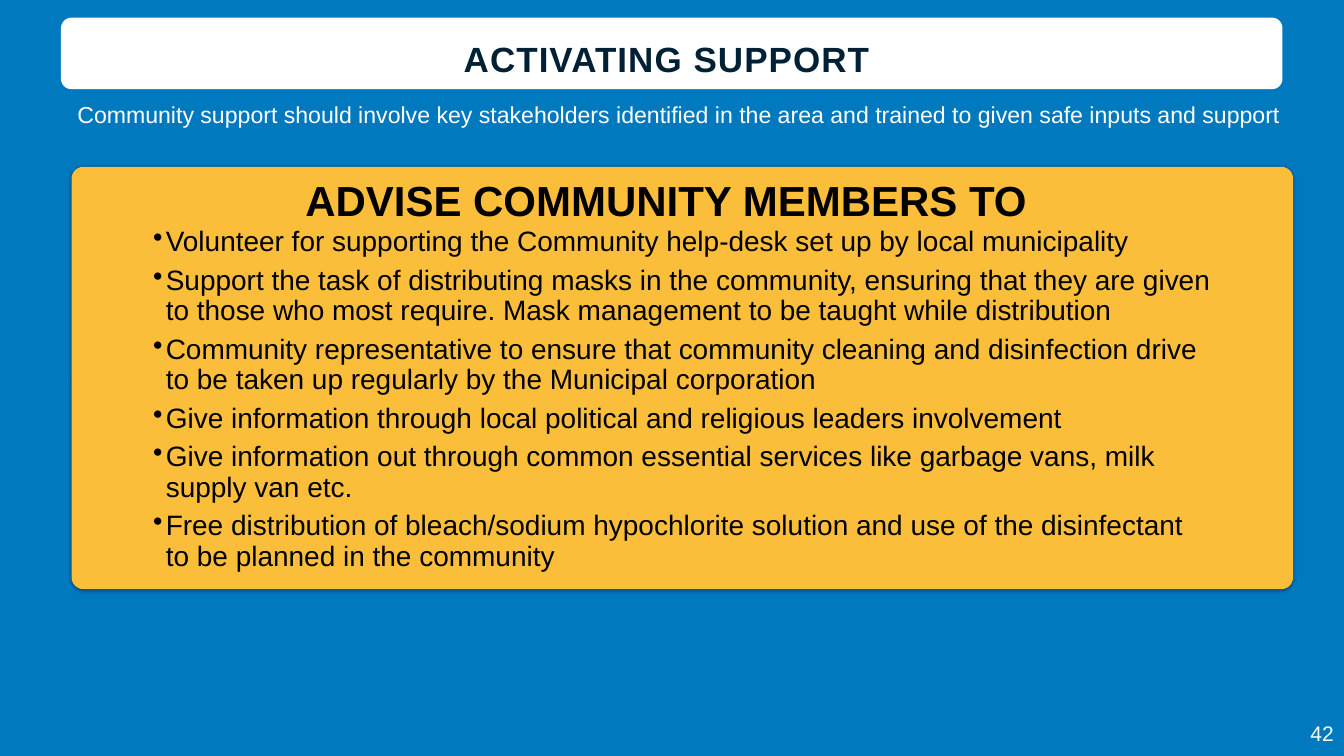
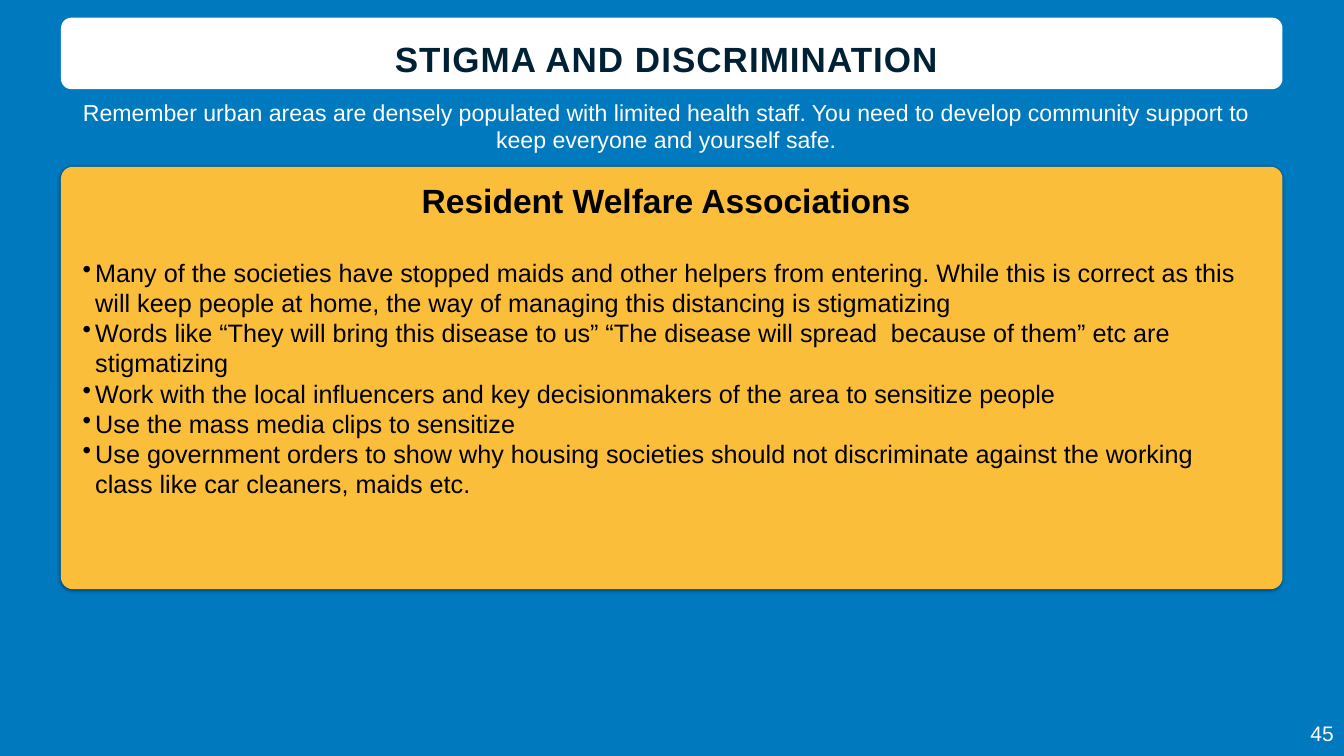
from dataclasses import dataclass

from lxml import etree
from pptx import Presentation
from pptx.dml.color import RGBColor
from pptx.enum.shapes import MSO_SHAPE
from pptx.enum.text import MSO_ANCHOR, MSO_AUTO_SIZE, PP_ALIGN
from pptx.oxml.ns import qn
from pptx.util import Inches, Pt

ROUNDED = MSO_SHAPE.ROUNDED_RECTANGLE
TOP, MIDDLE = MSO_ANCHOR.TOP, MSO_ANCHOR.MIDDLE
LEFT, CENTER = PP_ALIGN.LEFT, PP_ALIGN.CENTER
GROW = MSO_AUTO_SIZE.SHAPE_TO_FIT_TEXT
TITLE_ONLY = 5

BLUE, WHITE, NAVY, AMBER, BLACK = "0079BF", "FFFFFF", "002135", "FABE3B", "000000"
FONT = "Arial"
PANEL_WIDTH = 24.24


@dataclass(frozen=True)
class Box:
    left: float
    top: float
    width: float
    height: float

    def lengths(self) -> tuple:
        return tuple(Inches(v) for v in (self.left, self.top, self.width, self.height))


@dataclass(frozen=True)
class Style:
    size: float
    color: str
    bold: bool = False
    align: int = CENTER
    anchor: int = TOP
    inset: float = 0.05
    wrap: bool = True
    line_spacing: float | None = None
    space_before: float = 0
    tracking: float = 0
    bulleted: bool = False


@dataclass(frozen=True)
class TextBlock:
    box: Box
    style: Style
    lines: tuple[str, ...]


@dataclass(frozen=True)
class Topic:
    title: str
    number: str
    panel_left: float
    blocks: tuple[TextBlock, ...]


TITLE_BAND = Box(1.21, 0.35, PANEL_WIDTH, 1.42)
TITLE_BOX = Box(2.18, 0.62, 22.31, 0.88)
NUMBER_BOX = Box(25.94, 14.26, 0.59, 0.57)

TITLE = Style(50, NAVY, bold=True, line_spacing=1.1, tracking=1.5)
NUMBER = Style(30, WHITE, anchor=MIDDLE, inset=0.06, wrap=False)
INTRO = Style(33, WHITE, anchor=MIDDLE, inset=0.06, wrap=False)
LARGE_HEADING = Style(60, BLACK, bold=True, wrap=False)
HEADING = Style(48, BLACK, bold=True)
SPACED_BULLETS = Style(40, BLACK, align=LEFT, line_spacing=0.9, space_before=12,
                       bulleted=True)
BULLETS = Style(36, BLACK, align=LEFT, anchor=MIDDLE, inset=0.06, bulleted=True)

TOPICS = (
    Topic("ACTIVATING SUPPORT ", "42", 1.42, (
        TextBlock(Box(1.47, 1.96, 24.13, 0.62), INTRO, (
            "Community support should involve key stakeholders identified in the area "
            "and trained to given safe inputs and support ",
        )),
        TextBlock(Box(6, 3.41, 14.67, 1.03), LARGE_HEADING, (
            "ADVISE COMMUNITY MEMBERS TO ",
        )),
        TextBlock(Box(2.99, 4.47, 21.09, 6.62), SPACED_BULLETS, (
            "Volunteer for supporting the Community help-desk set up by local municipality",
            "Support the task of distributing masks in the community, ensuring that they are "
            "given to those who most require. Mask management to be taught while distribution",
            "Community representative to ensure that community cleaning and disinfection "
            "drive to be taken up regularly by the Municipal corporation",
            "Give information through local political and religious leaders involvement",
            "Give information out through common essential services like garbage vans, "
            "milk supply van etc.",
            "Free distribution of bleach/sodium hypochlorite solution and use of the "
            "disinfectant to be planned in the community",
        )),
    )),
    Topic("STIGMA AND DISCRIMINATION ", "45", 1.21, (
        TextBlock(Box(1.58, 1.92, 23.28, 1.15), INTRO, (
            "Remember urban areas are densely populated with limited health staff. "
            "You need to develop community support to",
            "keep everyone and yourself safe.",
        )),
        TextBlock(Box(2.42, 3.53, 21.6, 0.84), HEADING, (
            "Resident Welfare Associations",
        )),
        TextBlock(Box(1.58, 5.12, 23.28, 4.76), BULLETS, (
            "Many of the societies have stopped maids and other helpers from entering. While "
            "this is correct as this will keep people at home, the way of managing this "
            "distancing is stigmatizing",
            "Words like “They will bring this disease to us” “The disease will spread  "
            "because of them” etc are stigmatizing",
            "Work with the local influencers and key decisionmakers of the area to "
            "sensitize people",
            "Use the mass media clips to sensitize",
            "Use government orders to show why housing societies should not discriminate "
            "against the working class like car cleaners, maids etc.",
        )),
    )),
)


def paint(fill, color: str) -> None:
    fill.solid()
    fill.fore_color.rgb = RGBColor.from_string(color)


def add_bullet(paragraph) -> None:
    properties = paragraph._p.get_or_add_pPr()
    properties.set("marL", str(Inches(0.25)))
    properties.set("indent", str(Inches(-0.25)))
    bullet = etree.Element(qn("a:buChar"), char="•")
    properties.find(qn("a:defRPr")).addprevious(bullet)


def write(shape, lines: tuple[str, ...], style: Style) -> None:
    frame = shape.text_frame
    frame.text = "\n".join(lines)
    frame.word_wrap = style.wrap
    frame.auto_size = GROW
    frame.vertical_anchor = style.anchor
    frame.margin_left = frame.margin_right = Inches(style.inset)
    frame.margin_top = frame.margin_bottom = Inches(style.inset)
    for paragraph in frame.paragraphs:
        paragraph.alignment = style.align
        paragraph.line_spacing = style.line_spacing
        paragraph.space_before = Pt(style.space_before)
        font = paragraph.font
        font.name, font.size, font.bold = FONT, Pt(style.size), style.bold
        paint(font.fill, style.color)
        if style.tracking:
            defaults = paragraph._p.pPr.find(qn("a:defRPr"))
            defaults.set("spc", str(round(style.tracking * 100)))
        if style.bulleted:
            add_bullet(paragraph)


def add_text(slide, block: TextBlock) -> None:
    write(slide.shapes.add_textbox(*block.box.lengths()), block.lines, block.style)


def add_panel(slide, box: Box, color: str, rounding: float):
    panel = slide.shapes.add_shape(ROUNDED, *box.lengths())
    panel.adjustments[0] = rounding
    panel.shadow.inherit = False
    paint(panel.fill, color)
    panel.line.fill.background()
    return panel


def add_shadow(panel) -> None:
    effects = panel._element.spPr.find(qn("a:effectLst"))
    shadow = etree.SubElement(effects, qn("a:outerShdw"), blurRad=str(Pt(5)),
                              dist=str(Pt(2)), dir="5400000", rotWithShape="0")
    color = etree.SubElement(shadow, qn("a:srgbClr"), val=BLACK)
    etree.SubElement(color, qn("a:alpha"), val="50000")


def add_title(slide, text: str) -> None:
    band = add_panel(slide, TITLE_BAND, WHITE, 0.147)
    title = slide.shapes.title
    title.left, title.top, title.width, title.height = TITLE_BOX.lengths()
    write(title, (text,), TITLE)
    band._element.addnext(title._element)


def add_topic(presentation, topic: Topic) -> None:
    slide = presentation.slides.add_slide(presentation.slide_layouts[TITLE_ONLY])
    add_text(slide, TextBlock(NUMBER_BOX, NUMBER, (topic.number,)))
    add_title(slide, topic.title)
    add_shadow(add_panel(slide, Box(topic.panel_left, 3.31, PANEL_WIDTH, 8.38), AMBER, 0.028))
    for block in topic.blocks:
        add_text(slide, block)


def main() -> None:
    presentation = Presentation()
    presentation.slide_width, presentation.slide_height = Inches(26.67), Inches(15)
    paint(presentation.slide_master.background.fill, BLUE)
    for topic in TOPICS:
        add_topic(presentation, topic)
    presentation.save("out.pptx")


if __name__ == "__main__":
    main()
